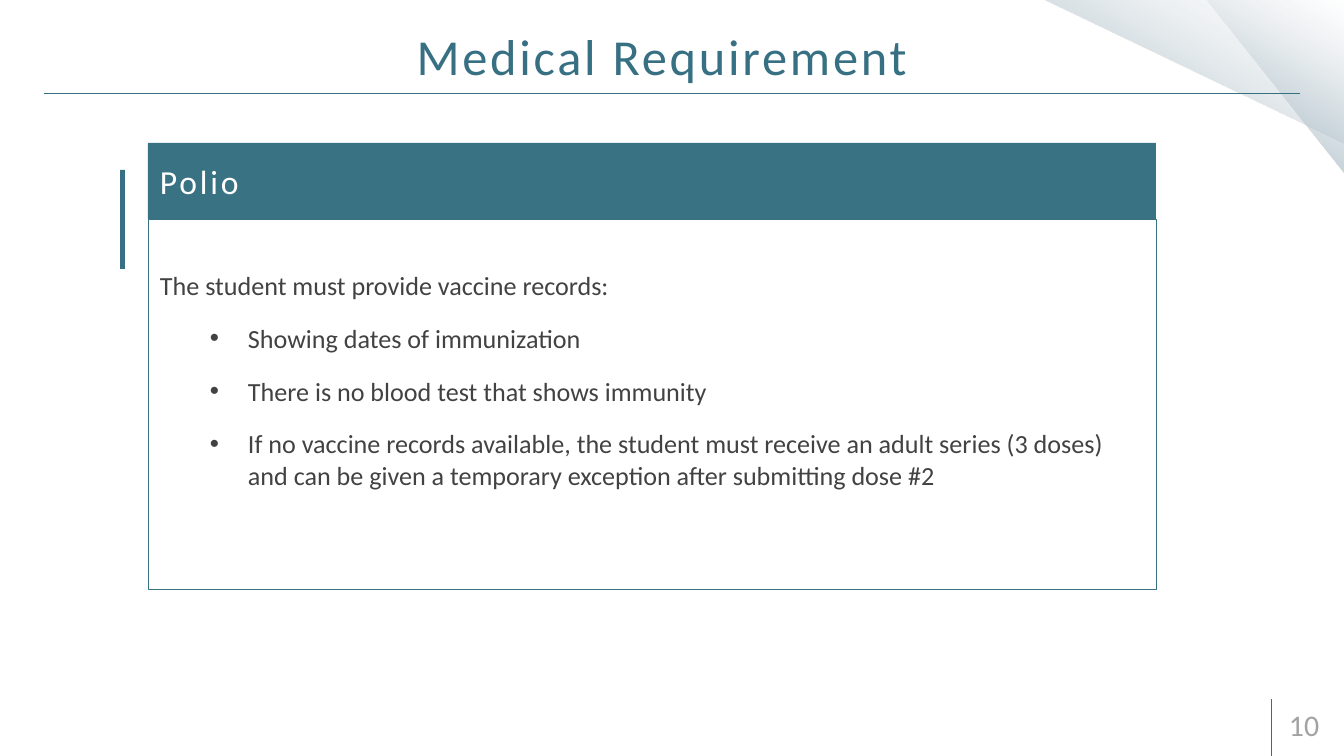
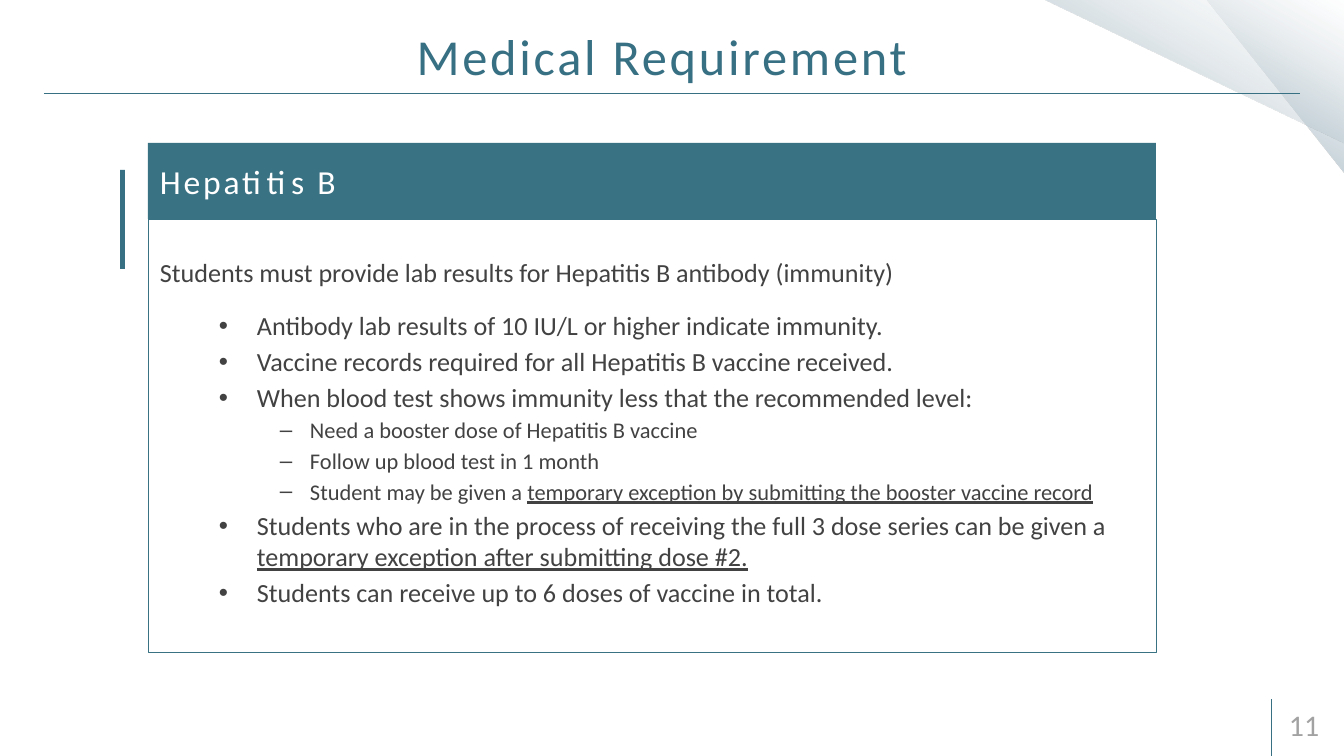
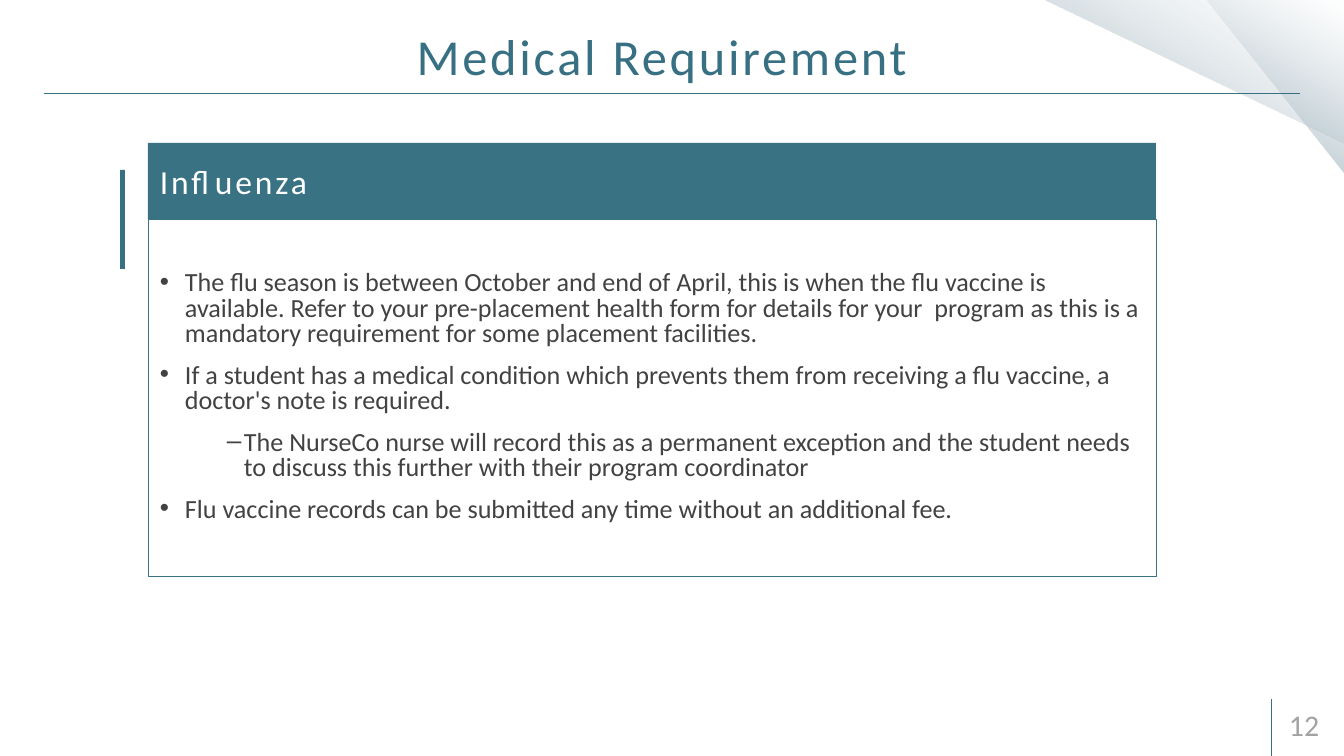
from dataclasses import dataclass
from lxml.etree import SubElement
from pptx import Presentation
from pptx.dml.color import RGBColor
from pptx.enum.shapes import MSO_CONNECTOR, MSO_SHAPE
from pptx.enum.text import MSO_ANCHOR, PP_ALIGN
from pptx.oxml.ns import qn
from pptx.util import Emu, Pt

EMU_PER_PX = 914400 / 67.2
FONT = "Calibri"
TEAL, BAND, INK, GREY, WHITE = "376F83", "397283", "424242", "A2A2A2", "FFFFFF"
GRADIENT = [(0, "9DB4C0", 100), (50, "B3C3CC", 44), (100, "E2E8EB", 0)]
TRIANGLES = [(1207, 0, 137, 173), (1044, 0, 301, 143)]
RULES = [(44, 93, 1300, 93), (1271, 756, 1271, 699)]
ACCENT_BAR = (120, 170, 5, 99)
TITLE_BOX = (47, 14, 1230, 83)
NUMBER_BOX = (1277, 705, 67, 40)
CARD_LEFT, CARD_TOP, CARD_WIDTH, HEADER_HEIGHT = 148, 143, 1008, 76
INSET_X, INSET_Y = 12, 6
TITLE = "Medical Requirement"
FIRST_NUMBER = 10


@dataclass
class Style:
    level: int = 0
    margin: int = 0
    indent: int = 0
    bullet: str = ""
    size: int = 28
    spacing: float = 1.0
    before: int = 0
    after: int = 0


STYLES = {
    "lead": Style(spacing=0.8, after=18),
    "record": Style(1, 88, -38, "•", before=5, after=18),
    "point": Style(1, 97, -38, "•", before=5),
    "detail": Style(2, 150, -30, "–", 24, before=4),
    "season": Style(0, 25, -25, "•", spacing=0.8, after=18),
    "exception": Style(1, 84, -17, "–", spacing=0.8, after=18),
    "closing": Style(0, 25, -25, "•", spacing=0.8, after=6),
}

CARDS = [
    {"heading": "Polio", "height": 370, "bottom_inset": 48, "text": [
        ("lead", "The student must provide vaccine records:"),
        ("record", "Showing dates of immunization"),
        ("record", "There is no blood test that shows immunity"),
        ("record", "If no vaccine records available, the student must receive an adult series "
                   "(3 doses) and can be given a temporary exception after submitting dose #2"),
    ]},
    {"heading": "Hepatitis B", "height": 433, "bottom_inset": INSET_Y, "text": [
        ("lead", "Students must provide lab results for Hepatitis B antibody (immunity)"),
        ("point", "Antibody lab results of 10 IU/L or higher indicate immunity."),
        ("point", "Vaccine records required for all Hepatitis B vaccine received."),
        ("point", "When blood test shows immunity less that the recommended level:"),
        ("detail", "Need a booster dose of Hepatitis B vaccine"),
        ("detail", "Follow up blood test in 1 month"),
        ("detail", "Student may be given a ",
         "temporary exception by submitting the booster vaccine record"),
        ("point", "Students who are in the process of receiving the full 3 dose series "
                  "can be given a ", "temporary exception after submitting dose #2."),
        ("point", "Students can receive up to 6 doses of vaccine in total."),
    ]},
    {"heading": "Influenza", "height": 357, "bottom_inset": INSET_Y, "text": [
        ("season", "The flu season is between October and end of April, this is when the flu "
                   "vaccine is available. Refer to your pre-placement health form for details for "
                   "your  program as this is a mandatory requirement for some placement facilities."),
        ("season", "If a student has a medical condition which prevents them from receiving a flu "
                   "vaccine, a doctor's note is required."),
        ("exception", "The NurseCo nurse will record this as a permanent exception and the student "
                      "needs to discuss this further with their program coordinator"),
        ("closing", "Flu vaccine records can be submitted any time without an additional fee."),
    ]},
]


def px(length):
    return Emu(round(length * EMU_PER_PX))


def color(value):
    return RGBColor.from_string(value)


def add_box(slide, box, fill=None, line=None, preset=MSO_SHAPE.RECTANGLE):
    shape = slide.shapes.add_shape(preset, *map(px, box))
    shape.shadow.inherit = False
    if fill:
        shape.fill.solid()
        shape.fill.fore_color.rgb = color(fill)
    else:
        shape.fill.background()
    if line:
        shape.line.color.rgb = color(line)
        shape.line.width = Pt(0.75)
    else:
        shape.line.fill.background()
    return shape


def add_triangle(slide, box):
    shape = add_box(slide, box, preset=MSO_SHAPE.RIGHT_TRIANGLE)
    shape.rotation = 180
    shape.fill.gradient()
    gradient = shape._element.spPr.find(qn("a:gradFill"))
    for child in list(gradient):
        gradient.remove(child)
    gradient.set("rotWithShape", "1")
    stops = SubElement(gradient, qn("a:gsLst"))
    for position, value, opacity in GRADIENT:
        stop = SubElement(stops, qn("a:gs"), pos=str(position * 1000))
        stop_color = SubElement(stop, qn("a:srgbClr"), val=value)
        SubElement(stop_color, qn("a:alpha"), val=str(opacity * 1000))
    SubElement(gradient, qn("a:lin"), ang=str(120 * 60000), scaled="0")


def add_rule(slide, ends):
    connector = slide.shapes.add_connector(MSO_CONNECTOR.STRAIGHT, *map(px, ends))
    connector.line.color.rgb = color(TEAL)
    connector.line.width = Pt(1)
    SubElement(connector._element.spPr, qn("a:effectLst"))


def prepare_frame(shape, bottom_inset=INSET_Y):
    frame = shape.text_frame
    frame.word_wrap = True
    frame.vertical_anchor = MSO_ANCHOR.MIDDLE
    frame.margin_left = frame.margin_right = px(INSET_X)
    frame.margin_top, frame.margin_bottom = px(INSET_Y), px(bottom_inset)
    return frame


def set_font(paragraph, size, value):
    font = paragraph.font
    font.name, font.size = FONT, Pt(size)
    font.color.rgb = color(value)


def write_line(shape, text, size, value, align=PP_ALIGN.LEFT, tracking=0):
    paragraph = prepare_frame(shape).paragraphs[0]
    paragraph.alignment = align
    run = paragraph.add_run()
    run.text = text
    if tracking:
        run._r.get_or_add_rPr().set("spc", str(tracking * 100))
    set_font(paragraph, size, value)


def write_body(shape, card):
    frame = prepare_frame(shape, card["bottom_inset"])
    for index, (name, plain, *underlined) in enumerate(card["text"]):
        style = STYLES[name]
        paragraph = frame.add_paragraph() if index else frame.paragraphs[0]
        paragraph.alignment = PP_ALIGN.LEFT
        paragraph.level = style.level
        properties = paragraph._p.get_or_add_pPr()
        properties.set("marL", str(px(style.margin)))
        properties.set("indent", str(px(style.indent)))
        if style.bullet:
            SubElement(properties, qn("a:buFont"), typeface="Arial")
            SubElement(properties, qn("a:buChar"), char=style.bullet)
        paragraph.line_spacing = style.spacing
        paragraph.space_after = Pt(style.after)
        if index:
            paragraph.space_before = Pt(style.before)
        paragraph.add_run().text = plain
        for text in underlined:
            run = paragraph.add_run()
            run.text = text
            run.font.underline = True
        set_font(paragraph, style.size, INK)


def add_frame(slide, number):
    for box in TRIANGLES:
        add_triangle(slide, box)
    for ends in RULES:
        add_rule(slide, ends)
    add_box(slide, ACCENT_BAR, TEAL)
    title = slide.shapes.add_textbox(*map(px, TITLE_BOX))
    write_line(title, TITLE, 54, TEAL, PP_ALIGN.CENTER, 3)
    page_number = slide.shapes.add_textbox(*map(px, NUMBER_BOX))
    write_line(page_number, str(number), 32, GREY)


def add_card(slide, card):
    header = add_box(slide, (CARD_LEFT, CARD_TOP, CARD_WIDTH, HEADER_HEIGHT), BAND)
    write_line(header, card["heading"], 36, WHITE, tracking=3)
    body_top = CARD_TOP + HEADER_HEIGHT
    body = add_box(slide, (CARD_LEFT, body_top, CARD_WIDTH, card["height"]), line=BAND)
    write_body(body, card)


def main():
    presentation = Presentation()
    presentation.slide_width, presentation.slide_height = px(1344), px(756)
    for number, card in enumerate(CARDS, FIRST_NUMBER):
        slide = presentation.slides.add_slide(presentation.slide_layouts[6])
        add_frame(slide, number)
        add_card(slide, card)
    presentation.save("out.pptx")


if __name__ == "__main__":
    main()
